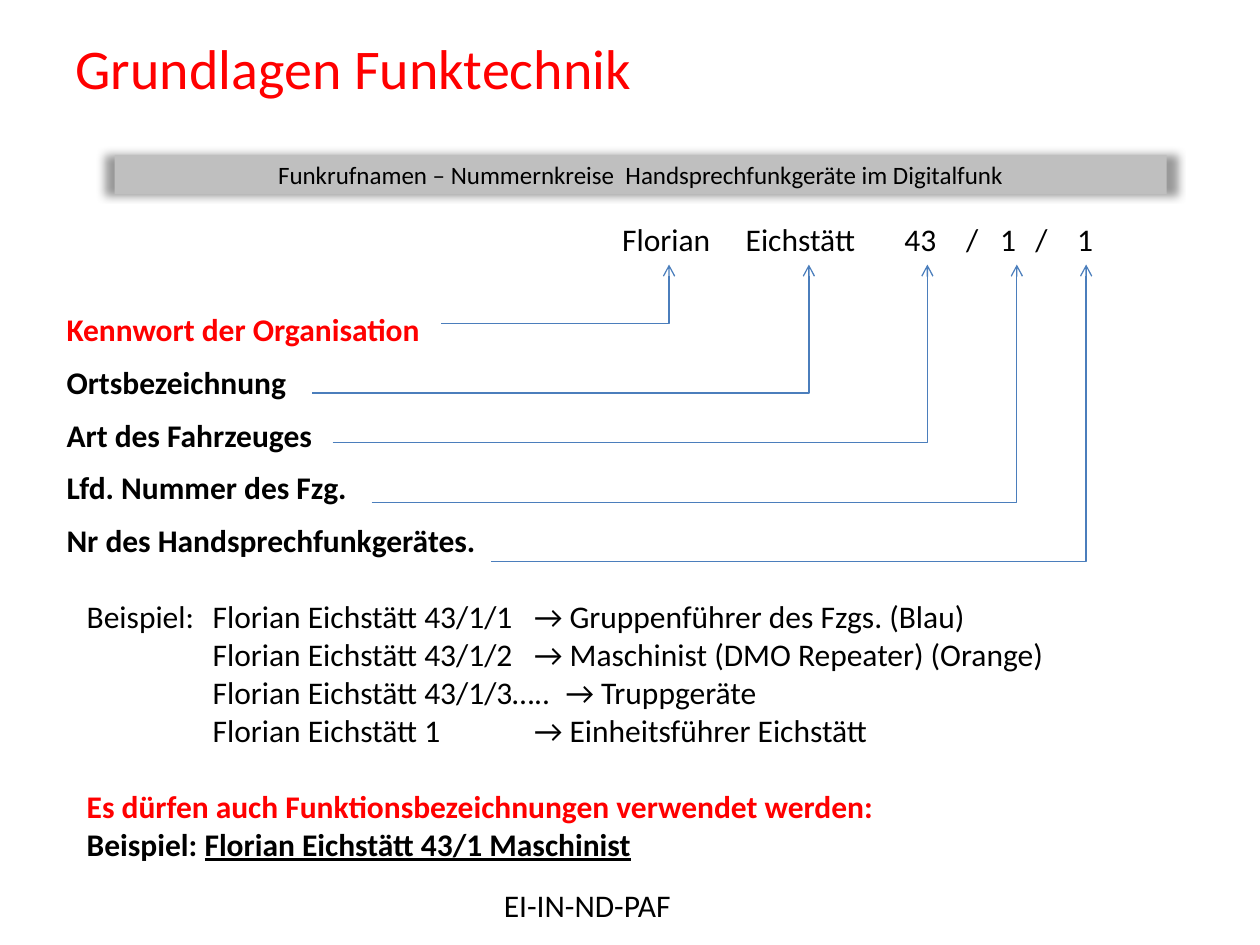
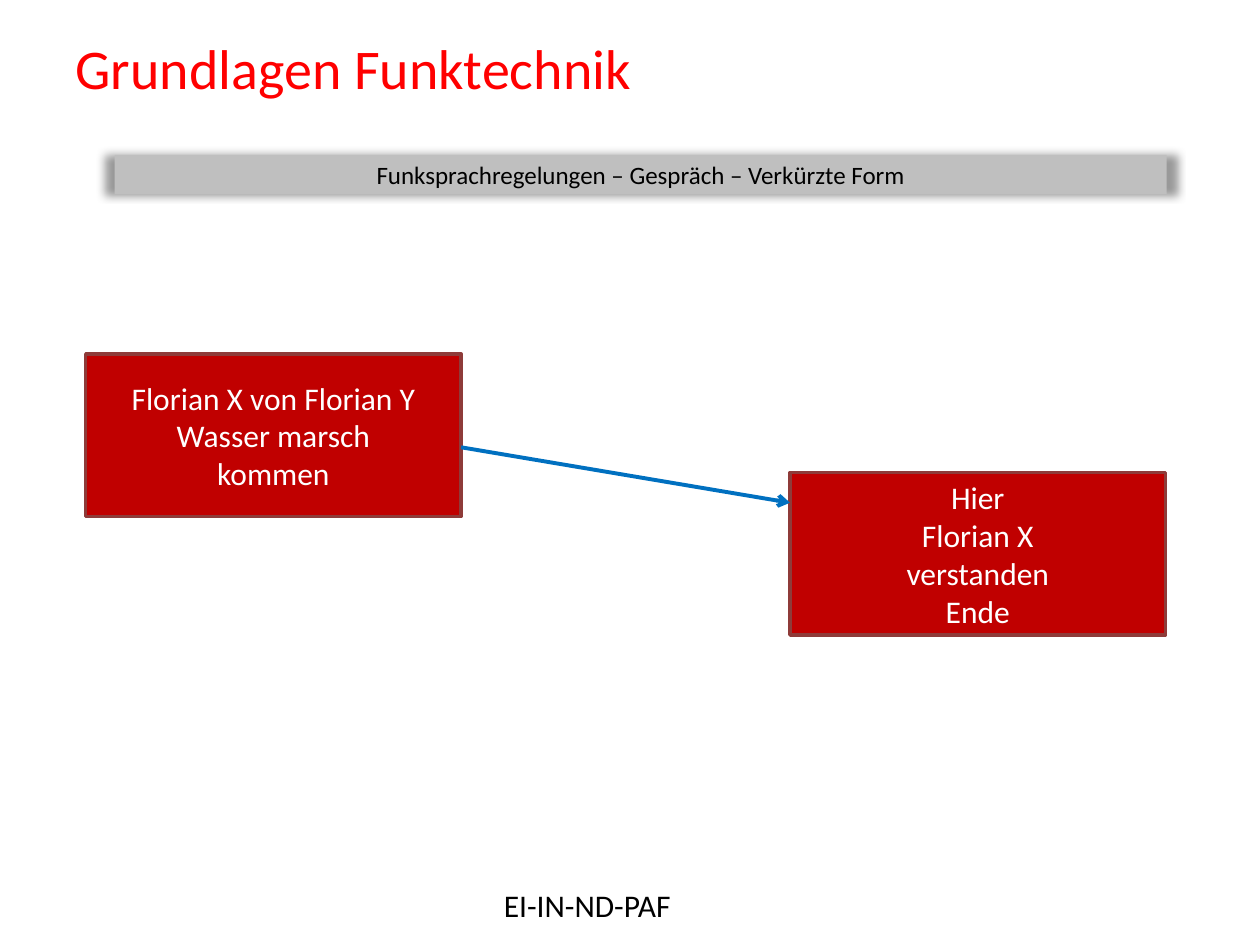
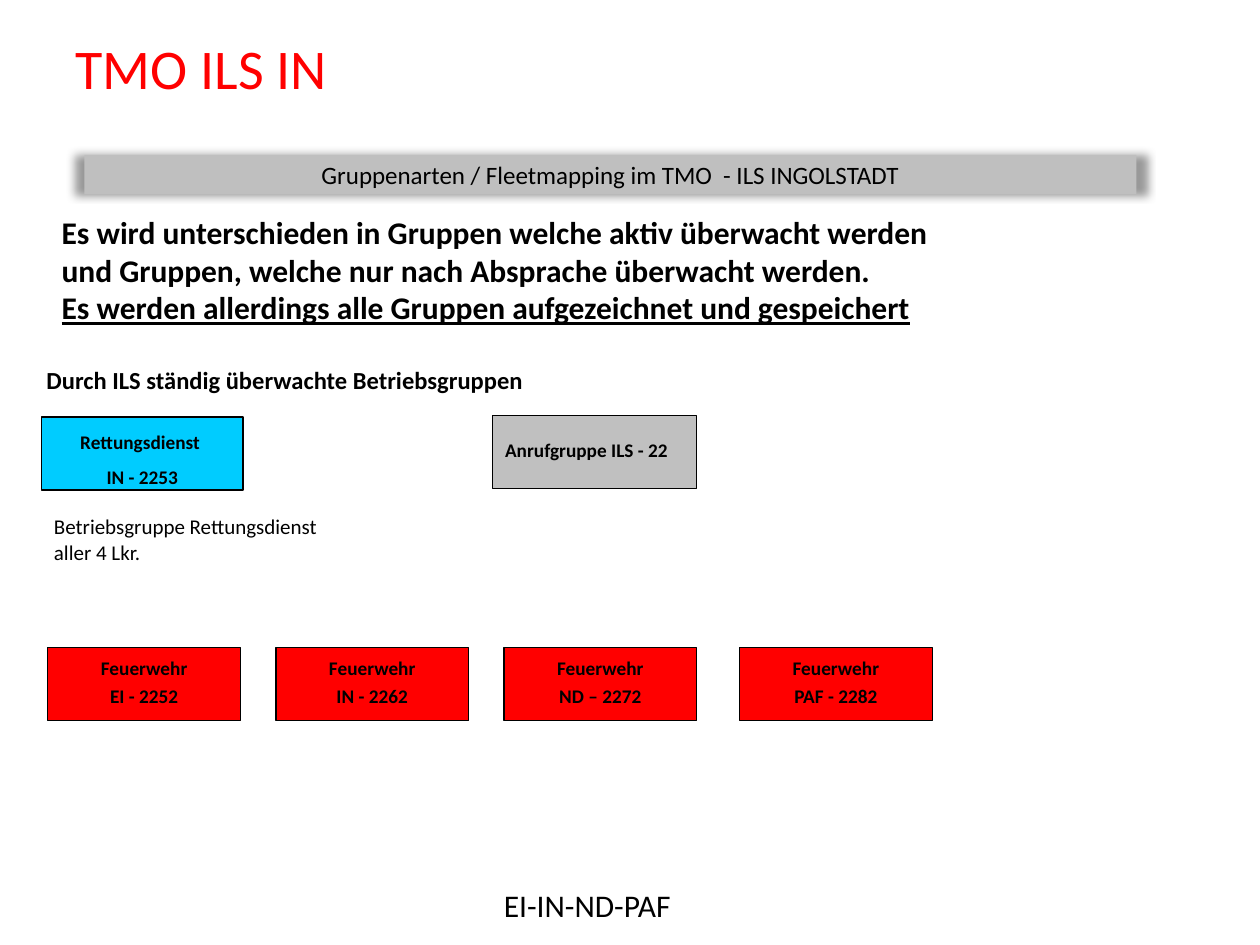
import copy
import dataclasses

import pptx
import pptx.dml.color
import pptx.enum.shapes
import pptx.enum.text
import pptx.oxml
import pptx.oxml.ns
import pptx.util

RGB = pptx.dml.color.RGBColor
BLACK = RGB(0x00, 0x00, 0x00)
WHITE = RGB(0xFF, 0xFF, 0xFF)
RED = RGB(0xFF, 0x00, 0x00)
DARK_RED = RGB(0xC0, 0x00, 0x00)
BROWN = RGB(0x8E, 0x3B, 0x39)
BAND_GRAY = RGB(0xBF, 0xBF, 0xBF)
CALL_GRAY = RGB(0xC0, 0xC0, 0xC0)
SKY = RGB(0x00, 0xCC, 0xFF)
LINE_BLUE = RGB(0x4B, 0x7E, 0xBC)
ARROW_BLUE = RGB(0x00, 0x70, 0xC0)

FONT = "Calibri"
LEFT = pptx.enum.text.PP_ALIGN.LEFT
CENTER = pptx.enum.text.PP_ALIGN.CENTER
MIDDLE = pptx.enum.text.MSO_ANCHOR.MIDDLE
STRAIGHT = pptx.enum.shapes.MSO_CONNECTOR.STRAIGHT
ELBOW = pptx.enum.shapes.MSO_CONNECTOR.ELBOW

WIDTH, HEIGHT = pptx.util.Inches(10), pptx.util.Inches(7.5)
COLUMN, ROW = WIDTH / 100, HEIGHT / 75
TITLE_ONLY = 5


@dataclasses.dataclass
class Box:
    """An area in grid columns and rows."""
    left: float
    top: float
    width: float
    height: float

    def inner(self, left, top, width, height):
        return Box(self.left + left, self.top + top, width, height)

    def emu(self):
        return (round(self.left * COLUMN), round(self.top * ROW),
                round(self.width * COLUMN), round(self.height * ROW))


def element(name, attributes="", content=""):
    namespace = pptx.oxml.ns.nsdecls("a")
    return pptx.oxml.parse_xml(f"<a:{name} {namespace} {attributes}>{content}</a:{name}>")


def span(para, text, size=18, color=BLACK, bold=False, underline=False):
    for number, line in enumerate(text.split("\n")):
        if number:
            para.add_line_break()
            para._p[-1].append(copy.deepcopy(run._r.rPr))
        run = para.add_run()
        run.text = line
        run.font.name = FONT
        run.font.size = pptx.util.Pt(size)
        run.font.color.rgb = color
        run.font.bold = bold
        run.font.underline = underline


def write(frame, text, align=LEFT, spacing=None, before=0, tabs=(), **look):
    """Add a paragraph; tabs are inches from the text's left edge."""
    first = not frame.text
    para = frame.paragraphs[0] if first else frame.add_paragraph()
    if tabs:
        stops = "".join(f'<a:tab pos="{pptx.util.Inches(stop)}" algn="l"/>' for stop in tabs)
        para._p.get_or_add_pPr().append(element("tabLst", content=stops))
    para.alignment = align
    if spacing:
        para.line_spacing = spacing
    if before and not first:
        para.space_before = pptx.util.Pt(before)
    span(para, text, **look)
    return para


def text_area(page, box, wrap=True):
    frame = page.shapes.add_textbox(*box.emu()).text_frame
    frame.word_wrap = wrap
    return frame


def panel(page, box, fill, line=None, line_width=0.75):
    rectangle = pptx.enum.shapes.MSO_SHAPE.RECTANGLE
    shape = page.shapes.add_shape(rectangle, *box.emu())
    shape.shadow.inherit = False
    shape.fill.solid()
    shape.fill.fore_color.rgb = fill
    if line is None:
        shape.line.fill.background()
    else:
        shape.line.color.rgb = line
        shape.line.width = pptx.util.Pt(line_width)
    shape.text_frame.vertical_anchor = MIDDLE
    shape.text_frame.word_wrap = False
    return shape


def arrow(page, kind, start, end, color, width):
    points = [round(value * unit) for point in (start, end)
              for value, unit in zip(point, (COLUMN, ROW))]
    connector = page.shapes.add_connector(kind, *points)
    connector.line.color.rgb = color
    connector.line.width = pptx.util.Pt(width)
    connector.line._get_or_add_ln().append(element("tailEnd", 'type="arrow"'))
    properties = connector._element.spPr
    properties.append(element("effectLst"))
    if kind == ELBOW:
        adjustments = properties.prstGeom.get_or_add_avLst()
        adjustments.append(element("gd", 'name="adj1" fmla="val 100000"'))


def heading_band(page, box, text):
    band = panel(page, box, BAND_GRAY)
    effects = band._element.spPr.find(pptx.oxml.ns.qn("a:effectLst"))
    effects.append(element(
        "outerShdw", 'blurRad="63500" sx="102000" sy="102000" algn="ctr" rotWithShape="0"',
        '<a:srgbClr val="000000"><a:alpha val="40000"/></a:srgbClr>'))
    write(band.text_frame, text, align=CENTER, size=14.3)


def base_page(deck, title, heading, band_left=9.1):
    page = deck.slides.add_slide(deck.slide_layouts[TITLE_ONLY])
    whole = Box(0, 0, 100, 75)
    holder = page.shapes.title
    holder.left, holder.top, holder.width, holder.height = whole.inner(5, 3, 90, 4.6).emu()
    holder.text_frame.auto_size = pptx.enum.text.MSO_AUTO_SIZE.NONE
    holder.text_frame.vertical_anchor = MIDDLE
    write(holder.text_frame, title, size=32, color=RED)
    heading_band(page, whole.inner(band_left, 12.3, 83.5, 3.1), heading)
    write(text_area(page, whole.inner(39, 69.8, 15.4, 4), wrap=False), "EI-IN-ND-PAF")
    return page


def call_sign_diagram(page, box):
    """Call sign above, meanings at the left, an elbow arrow from each to its section."""
    sign = text_area(page, box.inner(44.1, 0, 41.7, 4))
    write(sign, "Florian\tEichstätt\t43\t/\t1\t/\t1",
          tabs=(0.98, 2.24, 2.73, 3, 3.28, 3.61))
    meanings = text_area(page, box.inner(0, 7.1, 50, 22.2))
    # meaning, arrow start column and row, arrow end column
    sections = [("Kennwort der Organisation", 30.7, 8.7, 48.8),
                ("Ortsbezeichnung", 20.5, 14.2, 59.9),
                ("Art des Fahrzeuges", 22.1, 18.1, 69.3),
                ("Lfd. Nummer des Fzg.", 25.2, 22.9, 76.4),
                ("Nr des Handsprechfunkgerätes.", 34.7, 27.6, 81.9)]
    for number, (meaning, start, row, end) in enumerate(sections):
        write(meanings, meaning, before=8.6, bold=True, color=BLACK if number else RED)
        arrow(page, ELBOW, (box.left + start, box.top + row),
              (box.left + end, box.top + 4), LINE_BLUE, 0.75)


def call_sign_examples(page, box):
    frame = text_area(page, box)
    for line in ("Beispiel:\tFlorian Eichstätt 43/1/1\t→ Gruppenführer des Fzgs. (Blau)",
                 "\tFlorian Eichstätt 43/1/2\t→ Maschinist (DMO Repeater) (Orange)",
                 "\tFlorian Eichstätt 43/1/3…..\t→ Truppgeräte",
                 "\tFlorian Eichstätt 1\t→ Einheitsführer Eichstätt"):
        write(frame, line, tabs=(1, 3.55, 3.8))
    write(frame, "Es dürfen auch Funktionsbezeichnungen verwendet werden:",
          before=22, bold=True, color=RED)
    para = write(frame, "Beispiel: ", bold=True)
    span(para, "Florian Eichstätt 43/1 Maschinist", bold=True, underline=True)


def radio_dialogue(page, box):
    width, height = 29.8, 12.9
    messages = [(0, 0, ("Florian X von Florian Y", "Wasser marsch", "kommen")),
                (box.width - width, box.height - height,
                 ("Hier", "Florian X", "verstanden", "Ende"))]
    for left, top, lines in messages:
        message = panel(page, box.inner(left, top, width, height), DARK_RED, BROWN, 2)
        for line in lines:
            write(message.text_frame, line, align=CENTER, color=WHITE)
    arrow(page, STRAIGHT, (box.left + width, box.top + 7.4),
          (box.left + box.width - width, box.top + 11.8), ARROW_BLUE, 2.25)


def monitoring_note(page, box):
    frame = text_area(page, box)
    write(frame, "Es wird unterschieden in Gruppen welche aktiv überwacht werden\n"
                 "und Gruppen, welche nur nach Absprache überwacht werden.", bold=True)
    write(frame, "Es werden allerdings alle Gruppen aufgezeichnet und gespeichert",
          bold=True, underline=True)


def monitored_groups(page, box):
    label = dict(size=11, bold=True)
    write(text_area(page, box.inner(0, 0, 90.7, 2.9)),
          "Durch ILS ständig überwachte Betriebsgruppen", spacing=0.8, size=14, bold=True)
    rescue = panel(page, box.inner(0.6, 4.2, 16, 5.8), SKY, BLACK)
    write(rescue.text_frame, "Rettungsdienst \nIN - 2253",
          align=CENTER, spacing=1.5, **label)
    call_group = panel(page, box.inner(36.4, 4.1, 16.2, 5.8), CALL_GRAY, BLACK)
    call_group.text_frame.word_wrap = True
    write(call_group.text_frame, "Anrufgruppe ILS - 22", spacing=0.8, **label)
    remark = text_area(page, box.inner(0.6, 11.4, 23.1, 5), wrap=False)
    for line in ("Betriebsgruppe Rettungsdienst", "aller 4 Lkr."):
        write(remark, line, size=12)
    brigades = [(1.1, "EI - 2252"), (19.2, "IN - 2262"),
                (37.3, "ND – 2272"), (56, "PAF - 2282")]
    for left, group in brigades:
        brigade = panel(page, box.inner(left, 22.5, 15.3, 5.8), RED, BLACK)
        for line in ("Feuerwehr", group):
            write(brigade.text_frame, line, align=CENTER, spacing=0.8, before=5.3, **label)


def main():
    deck = pptx.Presentation()
    deck.slide_width, deck.slide_height = WIDTH, HEIGHT

    page = base_page(deck, "Grundlagen Funktechnik",
                     "Funkrufnamen – Nummernkreise  Handsprechfunkgeräte im Digitalfunk")
    call_sign_diagram(page, Box(4.3, 17, 86, 30))
    call_sign_examples(page, Box(5.9, 46.9, 79, 22.2))

    page = base_page(deck, "Grundlagen Funktechnik",
                     "Funksprachregelungen – Gespräch – Verkürzte Form")
    radio_dialogue(page, Box(6.8, 28.1, 85.7, 22.3))

    page = base_page(deck, "TMO ILS IN",
                     "Gruppenarten / Fleetmapping im TMO  - ILS INGOLSTADT", band_left=6.7)
    monitoring_note(page, Box(3.9, 16.4, 72.5, 10.1))
    monitored_groups(page, Box(2.7, 28.9, 91, 29))

    deck.save("out.pptx")


if __name__ == "__main__":
    main()
